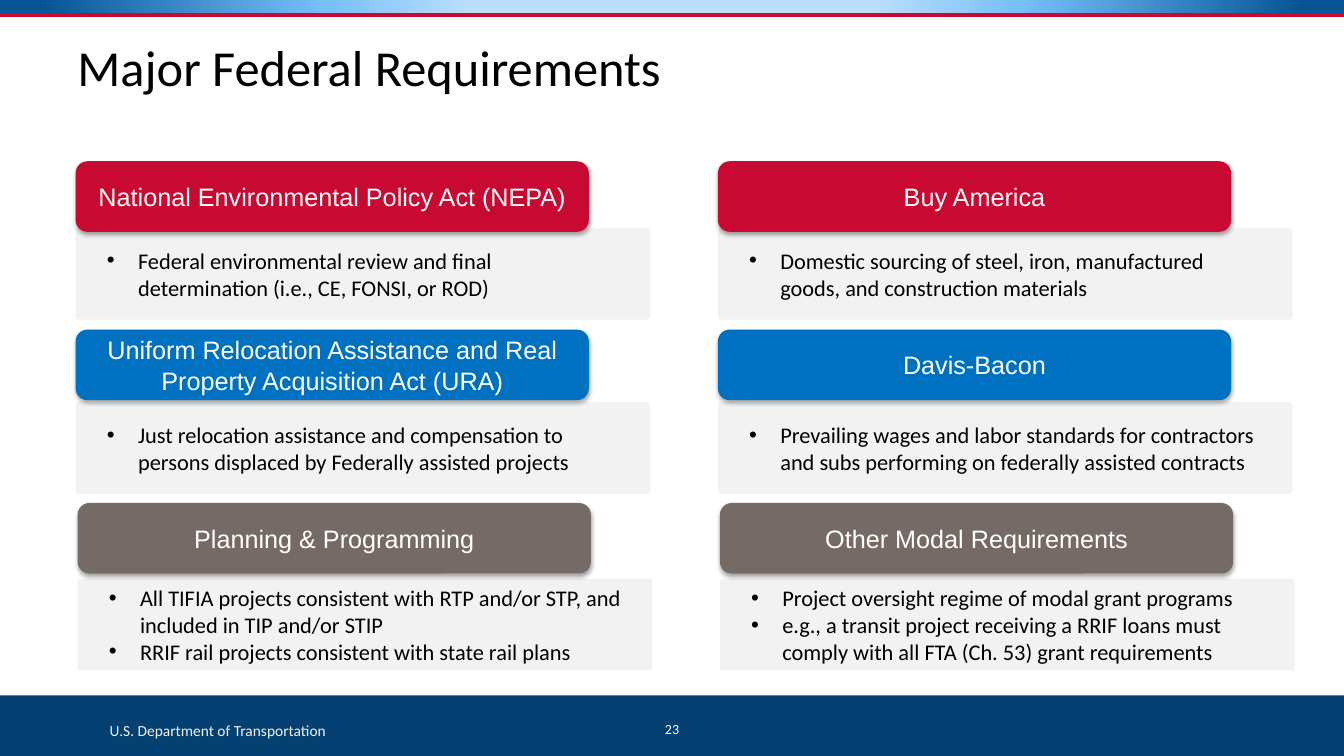
from lxml import etree
from pptx import Presentation
from pptx import util as u
from pptx.dml.color import RGBColor
from pptx.enum import shapes, text
from pptx.oxml import ns, parse_xml

TITLE = "Major Federal Requirements"
DEPARTMENT = "U.S. Department of Transportation"
PAGE = "23"
COLUMNS = [
    [
        ("National Environmental Policy Act (NEPA)",
         ["Federal environmental review and final determination (i.e., CE, FONSI, or ROD)"]),
        ("Uniform Relocation Assistance and Real Property Acquisition Act (URA)",
         ["Just relocation assistance and compensation to persons displaced by Federally assisted projects"]),
        ("Planning & Programming",
         ["All TIFIA projects consistent with RTP and/or STP, and included in TIP and/or STIP",
          "RRIF rail projects consistent with state rail plans"]),
    ],
    [
        ("Buy America",
         ["Domestic sourcing of steel, iron, manufactured goods, and construction materials"]),
        ("Davis-Bacon",
         ["Prevailing wages and labor standards for contractors and subs performing on federally assisted contracts"]),
        ("Other Modal Requirements",
         ["Project oversight regime of modal grant programs",
          "e.g., a transit project receiving a RRIF loans must comply with all FTA (Ch. 53) grant requirements"]),
    ],
]
COLORS = {
    "red": "C80A32", "blue": "0070C0", "taupe": "766A67", "panel": "F2F2F2",
    "navy": "044071", "black": "000000", "white": "FFFFFF",
    "band_edge": "055596", "band_mid": "76BFFA", "band_center": "BADFFD",
}
BAND_STOPS = [(0, "band_edge"), (3, "band_edge"), (24, "band_mid"), (35, "band_center"),
              (65, "band_center"), (76, "band_mid"), (97, "band_edge"), (100, "band_edge")]
WIDTH, HEIGHT = 13.33, 7.5
BAND_HEIGHT, FOOTER_HEIGHT = HEIGHT * 0.02, HEIGHT * 0.08
COLUMN_LEFTS = [0.75, 7.12]
ROWS = [("red", 1.6, 2.26, 0), ("blue", 3.27, 3.99, 0), ("taupe", 4.99, 5.74, 0.02)]
HEADING_SIZE, PANEL_SIZE = (5.09, 0.7), (5.7, 0.91)
INDENT = 0.31

deck = Presentation()
deck.slide_width, deck.slide_height = u.Inches(WIDTH), u.Inches(HEIGHT)
slide = deck.slides.add_slide(deck.slide_layouts[6])


def rgb(name):
    return RGBColor.from_string(COLORS[name])


def add_block(kind, place, color):
    block = slide.shapes.add_shape(kind, *map(u.Inches, place))
    block.shadow.inherit = False
    block.fill.solid()
    block.fill.fore_color.rgb = rgb(color)
    block.line.fill.background()
    return block


def write(holder, lines, size, color, font="Calibri", align=text.PP_ALIGN.LEFT,
          anchor=text.MSO_ANCHOR.MIDDLE, spacing=1.0, bulleted=False):
    frame = holder.text_frame
    frame.word_wrap = True
    frame.vertical_anchor = anchor
    for index, line in enumerate(lines):
        paragraph = frame.paragraphs[0] if index == 0 else frame.add_paragraph()
        paragraph.alignment = align
        paragraph.line_spacing = spacing
        if bulleted:
            props = paragraph._p.get_or_add_pPr()
            props.set("marL", str(u.Inches(INDENT)))
            props.set("indent", str(-u.Inches(INDENT)))
            etree.SubElement(props, ns.qn("a:buFont")).set("typeface", "Arial")
            etree.SubElement(props, ns.qn("a:buChar")).set("char", "•")
        run = paragraph.add_run()
        run.text = line
        run.font.size = u.Pt(size)
        run.font.name = font
        run.font.color.rgb = rgb(color)


def add_label(place, line, size, color, **style):
    label = slide.shapes.add_textbox(*map(u.Inches, place))
    write(label, [line], size, color, **style)


def add_panel(left, top, points):
    panel = add_block(shapes.MSO_SHAPE.ROUNDED_RECTANGLE, (left, top, *PANEL_SIZE), "panel")
    panel.adjustments[0] = 0.037
    panel.text_frame.margin_left = panel.text_frame.margin_right = u.Inches(0.3)
    write(panel, points, 16, "black", bulleted=True)


def add_heading(left, top, name, color):
    heading = add_block(shapes.MSO_SHAPE.ROUNDED_RECTANGLE, (left, top, *HEADING_SIZE), color)
    effects = heading._element.spPr.find(ns.qn("a:effectLst"))
    shadow = etree.SubElement(effects, ns.qn("a:outerShdw"), blurRad=str(u.Pt(3.1)),
                              dist=str(u.Pt(1.8)), dir="5400000", rotWithShape="0")
    tint = etree.SubElement(shadow, ns.qn("a:srgbClr"), val=COLORS["black"])
    etree.SubElement(tint, ns.qn("a:alpha"), val="35000")
    write(heading, [name], 18, "white", font="Arial", align=text.PP_ALIGN.CENTER)


band = add_block(shapes.MSO_SHAPE.RECTANGLE, (0, 0, WIDTH, BAND_HEIGHT), "band_edge")
stops = "".join(f'<a:gs pos="{share * 1000}"><a:srgbClr val="{COLORS[name]}"/></a:gs>'
                for share, name in BAND_STOPS)
gradient = parse_xml(f'<a:gradFill {ns.nsdecls("a")}><a:gsLst>{stops}</a:gsLst>'
                     '<a:lin ang="0" scaled="0"/></a:gradFill>')
band_props = band._element.spPr
band_props.replace(band_props.find(ns.qn("a:solidFill")), gradient)

rule = slide.shapes.add_connector(shapes.MSO_CONNECTOR.STRAIGHT, u.Inches(WIDTH), u.Inches(BAND_HEIGHT),
                                  0, u.Inches(BAND_HEIGHT))
rule.line.color.rgb = rgb("red")
rule.line.width = u.Pt(2.5)
etree.SubElement(rule._element.spPr, ns.qn("a:effectLst"))

add_block(shapes.MSO_SHAPE.RECTANGLE, (0, HEIGHT - FOOTER_HEIGHT, WIDTH, FOOTER_HEIGHT), "navy")
add_label((0.99, 7.1, 2.5, 0.29), DEPARTMENT, 11, "panel", anchor=text.MSO_ANCHOR.TOP)
add_label((6.21, 7.04, 0.91, 0.4), PAGE, 10, "white", align=text.PP_ALIGN.CENTER, spacing=0.9)
add_label((0.67, 0.4, 12, 0.6), TITLE, 36, "black", spacing=0.9)

for column_left, requirements in zip(COLUMN_LEFTS, COLUMNS):
    for (color, heading_top, panel_top, shift), (name, points) in zip(ROWS, requirements):
        add_panel(column_left + shift, panel_top, points)
        add_heading(column_left + shift, heading_top, name, color)

deck.save("out.pptx")
